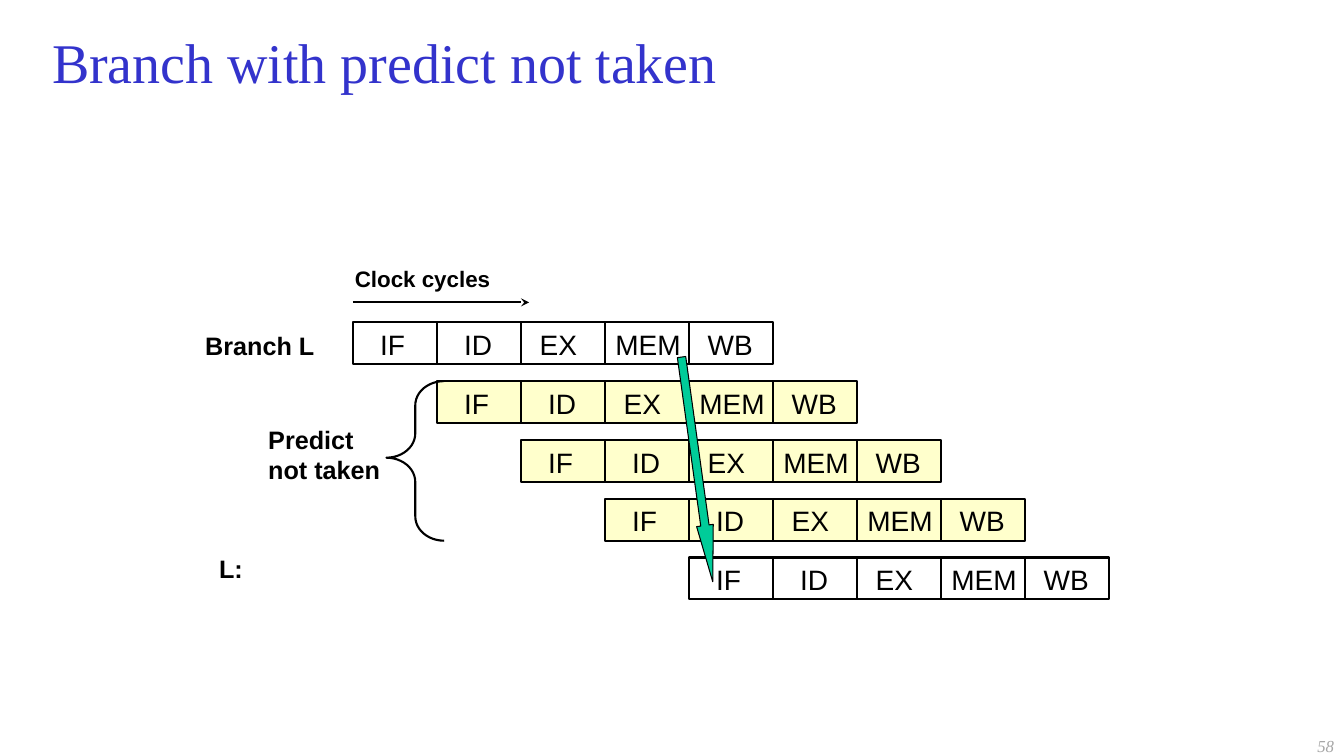
from dataclasses import dataclass

from lxml.etree import SubElement
from pptx import Presentation
from pptx.dml.color import RGBColor
from pptx.enum.shapes import MSO_CONNECTOR, MSO_SHAPE
from pptx.enum.text import MSO_ANCHOR, MSO_AUTO_SIZE, PP_ALIGN
from pptx.oxml.ns import qn
from pptx.shapes.autoshape import Shape
from pptx.slide import Slide
from pptx.text.text import TextFrame
from pptx.util import Emu, Pt

EMU_PER_PX = 9525
COLOURS = {
    "title": "3333CC",
    "ink": "000000",
    "predicted": "FFFFCC",
    "branch_arrow": "00CC99",
    "page_number": "A6A6A6",
}

CELL_WIDTH, CELL_HEIGHT = 80, 40
PIPELINE_LEFT, PIPELINE_TOP, ROW_STEP = 336, 307, 56
INSET_X, INSET_Y = 10, 5


@dataclass(frozen=True)
class Stage:
    name: str
    indent: int


@dataclass(frozen=True)
class Label:
    text: str
    left: int
    top: int
    width: int
    height: int
    size: int = 18
    font: str = "Arial"
    colour: str = "ink"
    bold: bool = True
    italic: bool = False
    align: PP_ALIGN = PP_ALIGN.CENTER
    wrap: bool = False


STAGES = [Stage("IF", 16), Stage("ID", 16), Stage("EX", 8), Stage("MEM", 0), Stage("WB", 8)]
ROW_FILLS = [None, "predicted", "predicted", "predicted", None]
LABELS = [
    Label("Branch L", 186, 310, 123, 38),
    Label("Predict not taken", 246, 399, 128, 67, align=PP_ALIGN.LEFT, wrap=True),
    Label("L:", 199, 522, 42, 38),
    Label("Clock cycles", 328, 248, 149, 35, size=16),
    Label("58", 981, 701, 299, 19, size=12, font="Times New Roman",
          colour="page_number", bold=False, italic=True, align=PP_ALIGN.RIGHT),
]


def px(length: int) -> Emu:
    return Emu(length * EMU_PER_PX)


def rgb(name: str) -> RGBColor:
    return RGBColor.from_string(COLOURS[name])


def write(frame: TextFrame, text: str, size: int, font: str, colour: str,
          align: PP_ALIGN = PP_ALIGN.LEFT, bold: bool = False, italic: bool = False) -> None:
    paragraph = frame.paragraphs[0]
    paragraph.alignment = align
    run = paragraph.add_run()
    run.text = text
    run.font.size = Pt(size)
    run.font.name = font
    run.font.bold = bold
    run.font.italic = italic
    run.font.color.rgb = rgb(colour)


def add_outlined(slide: Slide, kind: MSO_SHAPE, left: int, top: int, width: int, height: int,
                 fill: str | None = None, line_width: float = 1.5) -> Shape:
    shape = slide.shapes.add_shape(kind, px(left), px(top), px(width), px(height))
    shape.shadow.inherit = False
    if fill:
        shape.fill.solid()
        shape.fill.fore_color.rgb = rgb(fill)
    else:
        shape.fill.background()
    shape.line.color.rgb = rgb("ink")
    shape.line.width = Pt(line_width)
    return shape


def add_title(slide: Slide, text: str) -> None:
    title = slide.shapes.title
    title.left, title.top, title.width, title.height = px(40), px(20), px(1208), px(77)
    title.text_frame.auto_size = MSO_AUTO_SIZE.NONE
    title.text_frame.vertical_anchor = MSO_ANCHOR.MIDDLE
    write(title.text_frame, text, 40, "Times New Roman", "title")


def add_label(slide: Slide, label: Label) -> None:
    box = slide.shapes.add_textbox(px(label.left), px(label.top), px(label.width), px(label.height))
    frame = box.text_frame
    frame.word_wrap = label.wrap
    frame.vertical_anchor = MSO_ANCHOR.MIDDLE
    write(frame, label.text, label.size, label.font, label.colour,
          label.align, label.bold, label.italic)


def add_pipeline_row(slide: Slide, row: int, fill: str | None) -> None:
    """Each instruction starts one clock cycle after the one above it."""
    for column, stage in enumerate(STAGES, start=row):
        cell = add_outlined(slide, MSO_SHAPE.RECTANGLE, PIPELINE_LEFT + column * CELL_WIDTH,
                            PIPELINE_TOP + row * ROW_STEP, CELL_WIDTH, CELL_HEIGHT, fill)
        frame = cell.text_frame
        frame.word_wrap = True
        frame.vertical_anchor = MSO_ANCHOR.TOP
        frame.margin_left, frame.margin_right = px(INSET_X + stage.indent), px(0)
        frame.margin_top = frame.margin_bottom = px(INSET_Y)
        write(frame, stage.name, 20, "Arial", "ink")


def add_clock_arrow(slide: Slide) -> None:
    clock = slide.shapes.add_connector(MSO_CONNECTOR.STRAIGHT, px(336), px(288), px(504), px(288))
    clock.line.color.rgb = rgb("ink")
    clock.line.width = Pt(1.5)
    SubElement(clock.line._get_or_add_ln(), qn("a:tailEnd"), type="stealth")
    SubElement(clock._element.spPr, qn("a:effectLst"))


def main() -> None:
    presentation = Presentation()
    presentation.slide_width, presentation.slide_height = px(1280), px(720)
    slide = presentation.slides.add_slide(presentation.slide_layouts[5])
    add_title(slide, "Branch with predict not taken")

    # Pipeline diagram
    for row, fill in enumerate(ROW_FILLS):
        add_pipeline_row(slide, row, fill)

    # Brace around the predicted instructions
    brace = add_outlined(slide, MSO_SHAPE.LEFT_BRACE, 368, 363, 55, 152)
    brace.adjustments[0], brace.adjustments[1] = 0.42, 0.48

    # Labels and clock direction
    for label in LABELS:
        add_label(slide, label)
    add_clock_arrow(slide)

    # Branch outcome leading to the fetch at L
    branch_arrow = add_outlined(slide, MSO_SHAPE.DOWN_ARROW, 656, 339, 16, 216,
                                "branch_arrow", 0.75)
    branch_arrow.adjustments[0], branch_arrow.adjustments[1] = 0.5, 3.38
    branch_arrow.rotation = 352.1

    presentation.save("out.pptx")


if __name__ == "__main__":
    main()
